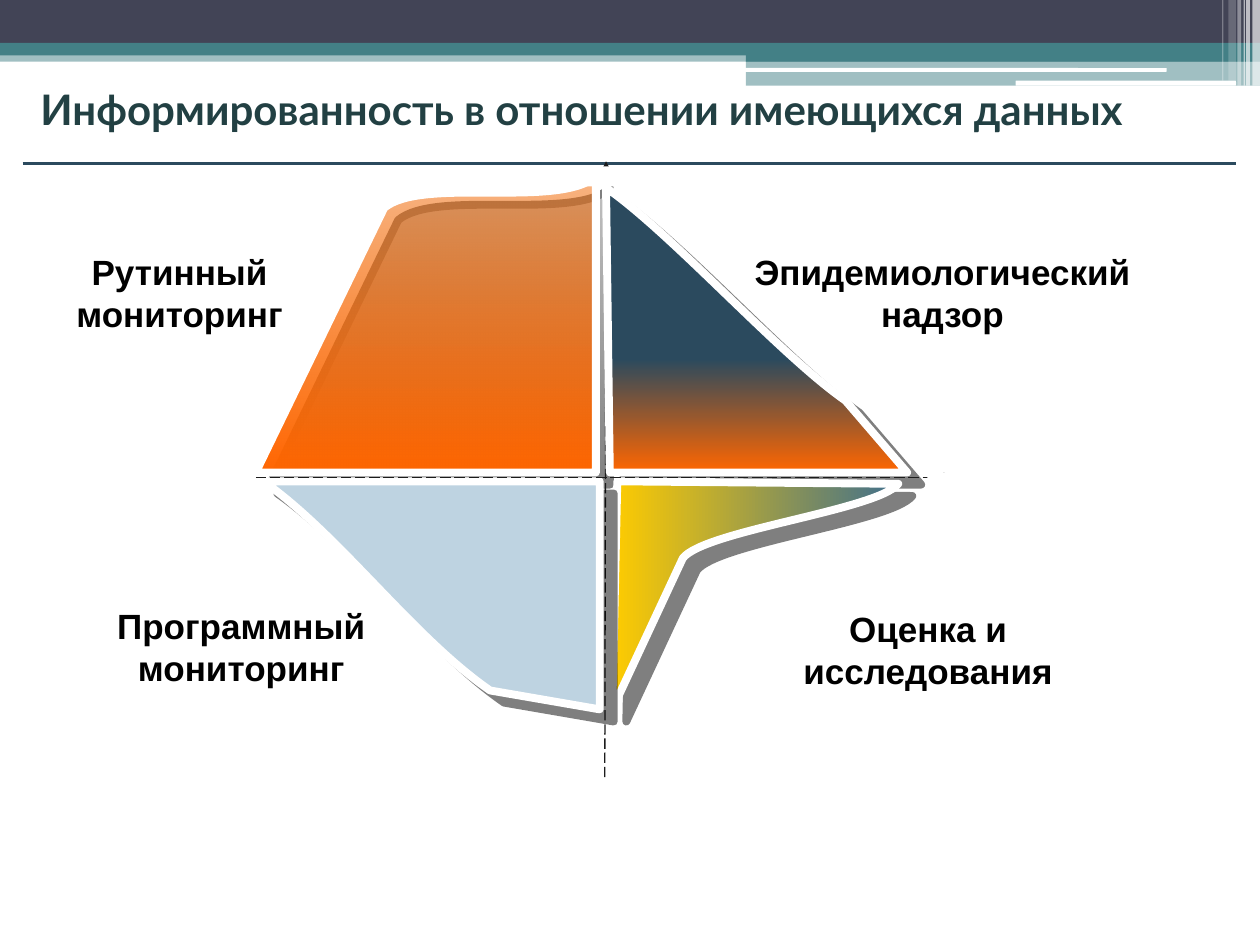
from lxml import etree
from pptx import Presentation
from pptx.dml.color import RGBColor
from pptx.enum.dml import MSO_LINE
from pptx.enum.shapes import MSO_CONNECTOR, MSO_SHAPE
from pptx.enum.text import MSO_ANCHOR, PP_ALIGN
from pptx.oxml.ns import qn
from pptx.util import Inches, Pt

RECT, ROUND = MSO_SHAPE.RECTANGLE, MSO_SHAPE.ROUNDED_RECTANGLE
STRAIGHT, LONG_DASH = MSO_CONNECTOR.STRAIGHT, MSO_LINE.LONG_DASH
LEFT, CENTER, MIDDLE = PP_ALIGN.LEFT, PP_ALIGN.CENTER, MSO_ANCHOR.MIDDLE

WHITE = RGBColor(0xFF, 0xFF, 0xFF)
BLACK = RGBColor(0x00, 0x00, 0x00)
INK = RGBColor(0x1C, 0x1C, 0x1C)
SLATE = RGBColor(0x42, 0x44, 0x56)
TEAL = RGBColor(0x43, 0x80, 0x86)
TITLE = RGBColor(0x22, 0x40, 0x43)
NAVY = RGBColor(0x2B, 0x4A, 0x5E)
STEEL = RGBColor(0x40, 0x6F, 0x8D)
PALE = RGBColor(0xBE, 0xD3, 0xE1)
AMBER = RGBColor(0xF2, 0x69, 0x05)
ORANGE = RGBColor(0xFF, 0x66, 0x00)
YELLOW = RGBColor(0xFF, 0xCC, 0x00)


def set_alpha(clr, percent):
    etree.SubElement(clr, qn("a:alpha"), val=str(percent * 1000))


class Builder:
    title_font, label_font = "Lato", "Arial"

    def __init__(self, slide):
        self.s = slide

    def add_text(self, tf, lines, font, size, color, align):
        tf.word_wrap = True
        for i, line in enumerate(lines):
            p = tf.add_paragraph() if i else tf.paragraphs[0]
            p.alignment = align
            r = p.add_run()
            r.text = line
            r.font.name, r.font.size, r.font.bold = font, Pt(size), True
            r.font.color.rgb = color

    def title(self, text, x, y, w, h):
        sp = self.s.shapes.title
        sp.left, sp.top, sp.width, sp.height = map(Inches, (x, y, w, h))
        sp.text_frame.vertical_anchor = MIDDLE
        self.add_text(sp.text_frame, [text], self.title_font, 24, TITLE, LEFT)

    def label(self, lines, x, y, w, h=0.77):
        sp = self.s.shapes.add_textbox(*map(Inches, (x, y, w, h)))
        self.add_text(sp.text_frame, lines, self.label_font, 20, BLACK, CENTER)

    def bar(self, x, y, w, h, color, alpha=100, kind=RECT):
        sp = self.s.shapes.add_shape(kind, *map(Inches, (x, y, w, h)))
        sp.shadow.inherit = False
        sp.fill.solid()
        sp.fill.fore_color.rgb = color
        sp.line.fill.background()
        if alpha < 100:
            set_alpha(sp._element.spPr.find(".//" + qn("a:srgbClr")), alpha)

    def line(self, x1, y1, x2, y2, color, width, dash=None, arrow=None):
        """arrow is headEnd (at the start) or tailEnd (at the end)."""
        cn = self.s.shapes.add_connector(STRAIGHT, *map(Inches, (x1, y1, x2, y2)))
        cn.line.color.rgb, cn.line.width = color, Pt(width)
        if dash:
            cn.line.dash_style = dash
        if arrow:
            ln = cn._element.spPr.find(qn("a:ln"))
            etree.SubElement(ln, qn("a:" + arrow), type="stealth")
        etree.SubElement(cn._element.spPr, qn("a:effectLst"))

    def petal(self, start, segments, stops, angle=270, alpha=100):
        """A segment of one point is straight, one of three is a cubic curve."""
        points = [pt for seg in segments for pt in seg]
        fb = self.s.shapes.build_freeform(*start, scale=Inches(1))
        # Local units are EMU so that fractions of an inch are kept
        fb = self.s.shapes.build_freeform(*map(Inches, start))
        fb.add_line_segments([(Inches(x), Inches(y)) for x, y in points], close=True)
        sp = fb.convert_to_shape()
        self.bend(sp, segments)
        sp.line.color.rgb, sp.line.width = WHITE, Pt(4.5)
        if len(stops) == 1:
            sp.fill.solid()
            sp.fill.fore_color.rgb = stops[0][1]
        else:
            sp.fill.gradient()
            sp.fill.gradient_angle = angle
            for stop, (position, color) in zip(sp.fill.gradient_stops, stops):
                stop.position, stop.color.rgb = position, color
            if alpha < 100:
                set_alpha(sp._element.spPr.find(".//" + qn("a:srgbClr")), alpha)
        self.cast_shadow(sp)

    def bend(self, sp, segments):
        lines = iter(list(sp._element.iter(qn("a:lnTo"))))
        for seg in segments:
            group = [next(lines) for _ in seg]
            if len(group) == 3:
                curve = etree.Element(qn("a:cubicBezTo"))
                group[0].addprevious(curve)
                for ln in group:
                    curve.append(ln[0])
                    ln.getparent().remove(ln)

    def cast_shadow(self, sp):
        sp.shadow.inherit = False
        effects = sp._element.spPr.find(qn("a:effectLst"))
        shadow = etree.SubElement(effects, qn("a:outerShdw"), blurRad="0",
                                  dist=str(int(Pt(10.6))), dir=str(41 * 60000),
                                  algn="ctr", rotWithShape="0")
        set_alpha(etree.SubElement(shadow, qn("a:srgbClr"), val=str(BLACK)), 50)


def main():
    prs = Presentation()
    prs.slide_width, prs.slide_height = Inches(10), Inches(7.5)
    b = Builder(prs.slides.add_slide(prs.slide_layouts[5]))

    # Header bands
    b.bar(0, 0.4, 10, 0.09, TEAL, 50)
    b.bar(0, 0, 10, 0.34, SLATE)
    b.bar(0, 0.34, 10, 0.1, TEAL)
    b.bar(5.92, 0.39, 4.08, 0.1, TEAL)
    b.bar(5.92, 0.48, 4.08, 0.2, TEAL, 50)
    b.bar(5.91, 0.54, 3.35, 0.03, WHITE, kind=ROUND)
    b.bar(8.06, 0.64, 1.75, 0.04, WHITE, kind=ROUND)
    for x, w, h, alpha in [(9.94, 0.06, 0.68, 65), (9.89, 0.03, 0.68, 65),
                           (9.87, 0.01, 0.68, 60), (9.82, 0.03, 0.68, 40),
                           (9.75, 0.06, 0.64, 20), (9.7, 0.01, 0.64, 30)]:
        b.bar(x, 0, w, h, WHITE, alpha)
    b.line(0.18, 1.3, 9.81, 1.3, NAVY, 1.5)
    b.title("Информированность в отношении имеющихся данных", 0.22, 0.29, 9.78, 1.15)

    # Four data sources around the axes
    b.petal((4.73, 3.75),
            [[(4.73, 1.4)], [(4.43, 1.66), (3.35, 1.4), (3.05, 1.65)], [(2.03, 3.75)]],
            [(0, AMBER), (1, ORANGE)], alpha=50)
    b.line(4.81, 1.28, 4.8, 6.19, INK, 0.75, LONG_DASH, "headEnd")
    b.petal((4.84, 3.75),
            [[(4.81, 1.49)], [(5.34, 1.86), (6.18, 2.81), (6.71, 3.18)], [(7.2, 3.75)]],
            [(0.6, NAVY), (1, ORANGE)])
    b.petal((4.9, 3.82),
            [[(7.13, 3.84)], [(6.96, 4.05), (5.59, 4.21), (5.42, 4.43)], [(4.86, 5.63)]],
            [(0, STEEL), (1, YELLOW)], angle=180)
    b.petal((4.76, 3.82),
            [[(2.09, 3.82)], [(2.69, 4.24), (3.28, 5.06), (3.89, 5.48)], [(4.76, 5.63)]],
            [(0, PALE)])
    b.line(2.03, 3.79, 7.57, 3.79, INK, 0.75, LONG_DASH, "tailEnd")

    b.label(["Рутинный мониторинг"], 0, 1.94, 2.85)
    b.label(["Эпидемиологический", "надзор"], 5.87, 1.94, 3.22)
    b.label(["Оценка и исследования"], 6.22, 4.77, 2.29)
    b.label(["Программный мониторинг"], 0.83, 4.75, 2.17)

    # Covers over the axis ends
    for x, y in [(4.61, 1.32), (7.36, 3.75)]:
        b.bar(x, y, 0.55, 0.16, WHITE)

    prs.save("out.pptx")


if __name__ == "__main__":
    main()
